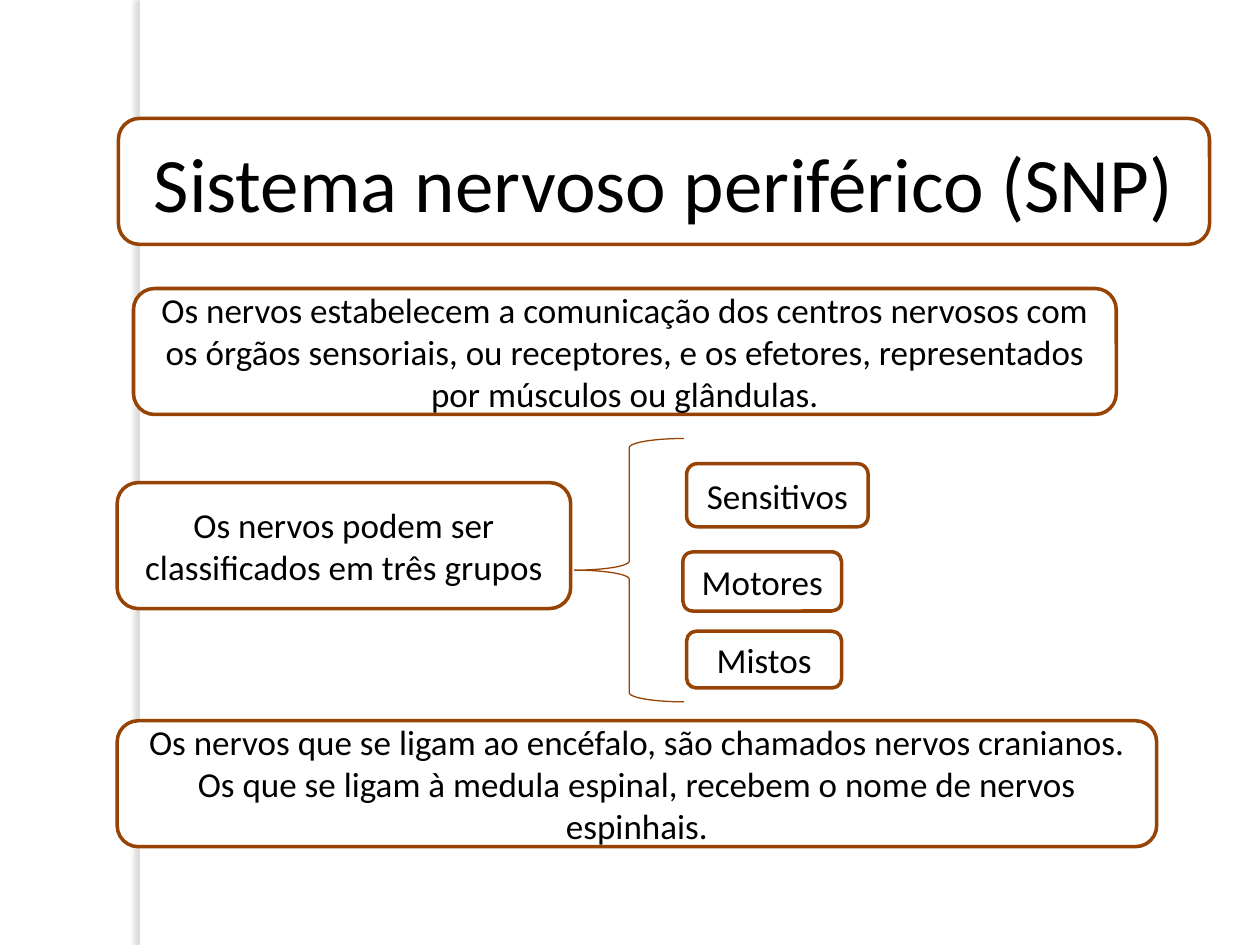
from lxml import etree
from pptx import Presentation, util as u
from pptx.dml.color import RGBColor
from pptx.enum import shapes, text
from pptx.oxml.ns import qn

WIDTH, HEIGHT = u.Inches(10), u.Inches(7.5)
BROWN, WHITE, BLACK, SHADE = "964305", "FFFFFF", "000000", "736F63"
BAR = (11.1, 0, 0.8, 100)
BRACE = (45.6, 46.4, 8.7, 27.87)
ROW = 13.33
BOXES = [
    ("Sistema nervoso periférico (SNP)", 44, (9.4, 12.53, 86.6, ROW)),
    ("Os nervos estabelecem a comunicação dos centros nervosos com os órgãos "
     "sensoriais, ou receptores, e os efetores, representados por músculos ou "
     "glândulas.", 20, (10.6, 30.53, 78, ROW)),
    ("Os nervos que se ligam ao encéfalo, são chamados nervos cranianos. Os que se "
     "ligam à medula espinal, recebem o nome de nervos espinhais.",
     20, (9.3, 76.27, 82.5, ROW)),
    ("Os nervos podem ser classificados em três grupos", 20, (9.3, 51.07, 36, ROW)),
    ("Sensitivos", 20, (54.5, 49.07, 14.4, 6.67)),
    ("Motores", 20, (54.2, 58.4, 12.6, 6.27)),
    ("Mistos", 20, (54.5, 66.8, 12.3, 6)),
]


def rgb(color):
    return RGBColor.from_string(color)


def add_shape(s, kind, area, fill=None, line=None, weight=0):
    x, y, w, h = (round(share * side / 100)
                  for share, side in zip(area, (WIDTH, HEIGHT) * 2))
    sp = s.shapes.add_shape(kind, x, y, w, h)
    sp.shadow.inherit = False
    if fill:
        sp.fill.solid()
        sp.fill.fore_color.rgb = rgb(fill)
    else:
        sp.fill.background()
    if line:
        sp.line.color.rgb = rgb(line)
        sp.line.width = u.Pt(weight)
    else:
        sp.line.fill.background()
    return sp


def add_left_shadow(sp):
    effects = sp.element.spPr.find(qn("a:effectLst"))
    shadow = etree.SubElement(effects, qn("a:outerShdw"), blurRad=str(u.Pt(3)),
                              dist=str(u.Pt(3)), dir="10800000", rotWithShape="0")
    color = etree.SubElement(shadow, qn("a:srgbClr"), val=SHADE)
    etree.SubElement(color, qn("a:alpha"), val="25000")


def add_box(s, words, size, area):
    sp = add_shape(s, shapes.MSO_SHAPE.ROUNDED_RECTANGLE, area, WHITE, BROWN, 2)
    tf = sp.text_frame
    tf.word_wrap = True
    tf.vertical_anchor = text.MSO_ANCHOR.MIDDLE
    tf.text = words
    p = tf.paragraphs[0]
    p.alignment = text.PP_ALIGN.CENTER
    r = p.runs[0]
    r.font.name, r.font.size = "Calibri", u.Pt(size)
    r.font.color.rgb = rgb(BLACK)


def main():
    """Build the slide on the peripheral nervous system."""
    prs = Presentation()
    prs.slide_width, prs.slide_height = WIDTH, HEIGHT
    s = prs.slides.add_slide(prs.slide_layouts[6])
    add_left_shadow(add_shape(s, shapes.MSO_SHAPE.RECTANGLE, BAR, WHITE))
    for box in BOXES[:3]:
        add_box(s, *box)
    add_shape(s, shapes.MSO_SHAPE.LEFT_BRACE, BRACE, line=BROWN, weight=0.75)
    for box in BOXES[3:]:
        add_box(s, *box)
    prs.save("out.pptx")


if __name__ == "__main__":
    main()
